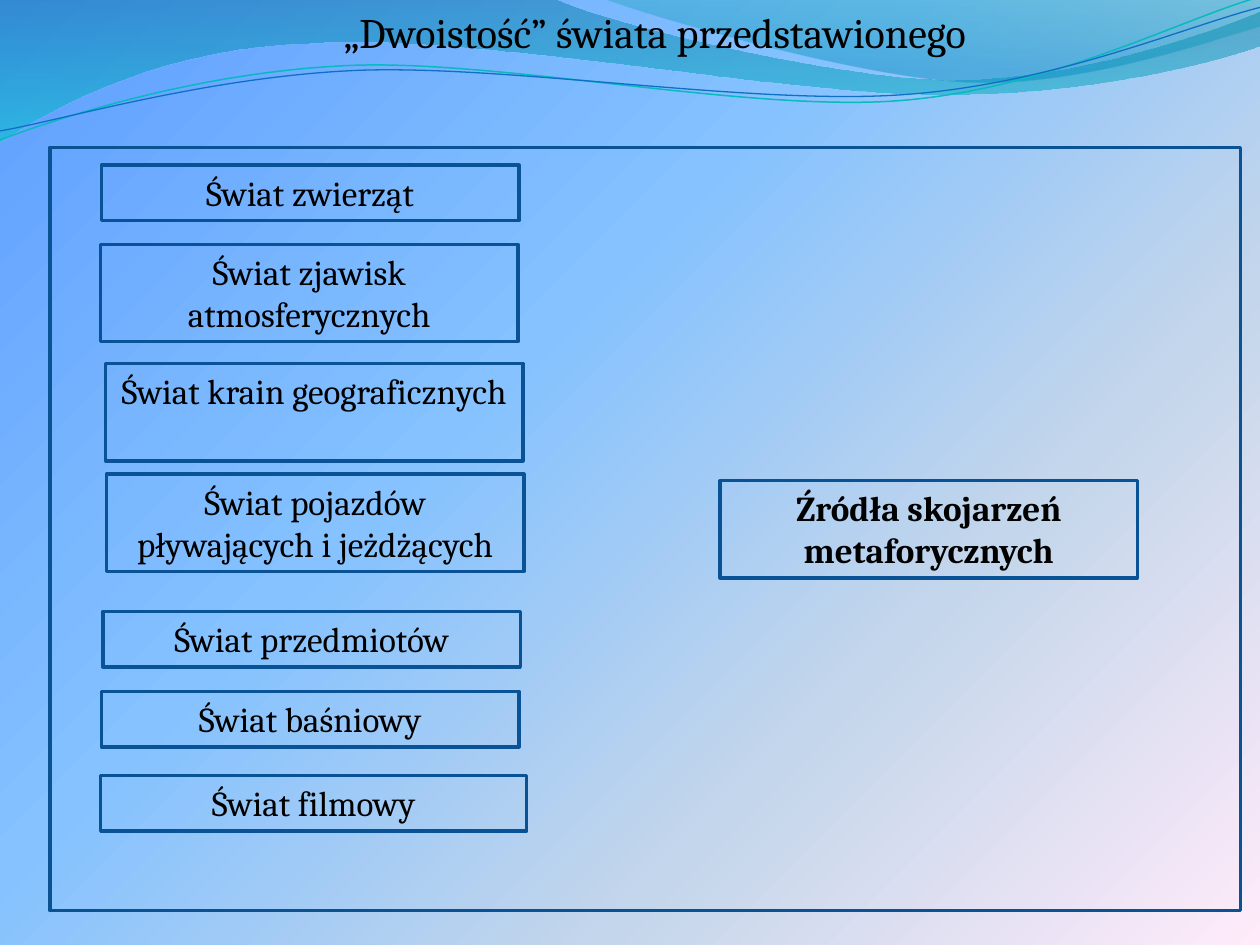
from math import cos, radians, sin

from lxml import etree
from pptx import Presentation
from pptx.dml.color import RGBColor
from pptx.enum.shapes import MSO_SHAPE
from pptx.enum.text import MSO_ANCHOR, PP_ALIGN
from pptx.oxml.ns import qn
from pptx.util import Cm, Pt

RECTANGLE = MSO_SHAPE.RECTANGLE
CENTER = PP_ALIGN.CENTER
TOP = MSO_ANCHOR.TOP

BLACK = RGBColor(0x00, 0x00, 0x00)
BORDER = RGBColor(0x09, 0x52, 0x95)
FRAME_BORDER = RGBColor(0x0B, 0x52, 0x92)
TEAL = RGBColor(0x0A, 0xB8, 0xBF)
BLUE = RGBColor(0x0F, 0x6F, 0xC6)
FONT = "Cambria"
LINE_TILT = 2.7  # degrees, anticlockwise

# Content; lengths in centimetres
TITLE = "„Dwoistość” świata przedstawionego"
BOX_WIDTH = 8.41
LINE_HEIGHTS = {1: 1.12, 2: 1.96}

# text, left, top, width, number of lines, bold
BOXES = [
    ("Źródła skojarzeń metaforycznych", 14.52, 9.69, BOX_WIDTH, 2, True),
    ("Świat zwierząt", 2.05, 3.33, BOX_WIDTH, 1, False),
    ("Świat zjawisk atmosferycznych", 2.03, 4.93, BOX_WIDTH, 2, False),
    ("Świat krain geograficznych", 2.13, 7.33, BOX_WIDTH, 2, False),
    ("Świat pojazdów pływających i jeżdżących", 2.15, 9.56, BOX_WIDTH, 2, False),
    ("Świat przedmiotów", 2.08, 12.33, BOX_WIDTH, 1, False),
    ("Świat baśniowy", 2.05, 13.94, BOX_WIDTH, 1, False),
    ("Świat filmowy", 2.03, 15.63, 8.59, 1, False),
]

# Gradient stops: position, colour, opacity (all in percent but the colour)
BACKGROUND = [(0, "5E9EFF", 100), (40, "85C2FF", 100),
              (70, "C4D6EB", 100), (100, "FFEBFA", 100)]

# Outlines: start point, then segments of one point (line) or three (curve)
FILLED_WAVES = [
    ([(0, "0074A1", 45), (100, "00C6CF", 55)], (0, 0), [
        [(11.18, -0.03)],
        [(12.09, 0.43), (16.87, 1.6), (19.25, 1.6)],
        [(21.67, 1.6), (24.33, 0.66), (25.4, 0.23)],
        [(25.43, 0.91)],
        [(24.97, 1.12), (22.1, 1.93), (18.95, 1.91)],
        [(15.8, 1.91), (9.7, 0.71), (6.53, 0.86)],
        [(3.28, 0.91), (1.17, 2.11), (-0.03, 2.87)],
    ]),
    ([(0, "00A1A9", 30), (80, "008BBF", 45)], (12.17, -0.03), [
        [(12.93, 0.28), (17.32, 1.57), (19.53, 1.65)],
        [(21.74, 1.75), (24.41, 0.81), (25.4, 0.53)],
        [(25.4, 0)],
    ]),
]
# colour, line width, centre of the tilt, start, segments
LINE_WAVES = [
    (TEAL, 0.85, (12.67, 1.46), (0, 2.82), [
        [(1.22, 2.36), (4.01, 1.45), (7.04, 1.32)],
        [(10.03, 1.19), (15.06, 2.26), (18.11, 2.03)],
        [(21.16, 1.8), (23.83, 0.38), (25.35, -0.05)],
    ]),
    (BLUE, 0.75, (12.69, 1.5), (0, 2.64), [
        [(1.19, 2.44), (4.17, 1.55), (7.19, 1.42)],
        [(10.24, 1.3), (15.16, 2.13), (18.21, 1.91)],
        [(21.23, 1.7), (23.9, 0.53), (25.4, 0.15)],
    ]),
]


def set_gradient(fill, parent, stops, angle):
    """Fill with a linear gradient; the angle runs clockwise in degrees."""
    fill.gradient()
    gradient = next(parent.iter(qn("a:gradFill")))
    for child in list(gradient):
        gradient.remove(child)
    stop_list = etree.SubElement(gradient, qn("a:gsLst"))
    for position, color, opacity in stops:
        stop = etree.SubElement(stop_list, qn("a:gs"), pos=str(position * 1000))
        color_element = etree.SubElement(stop, qn("a:srgbClr"), val=color)
        if opacity < 100:
            etree.SubElement(color_element, qn("a:alpha"), val=str(opacity * 1000))
    etree.SubElement(gradient, qn("a:lin"), ang=str(angle * 60000), scaled="0")


def level(point, center):
    """Turn a point clockwise about the centre, undoing the tilt."""
    angle = radians(LINE_TILT)
    x, y = point[0] - center[0], point[1] - center[1]
    return (center[0] + x * cos(angle) - y * sin(angle),
            center[1] + x * sin(angle) + y * cos(angle))


def add_wave(slide, start, segments, close):
    """Build the outline through all points, then turn triples into curves."""
    points = [(Cm(x), Cm(y)) for x, y in [start, *sum(segments, [])]]
    builder = slide.shapes.build_freeform(*points[0])
    builder.add_line_segments(points[1:], close=close)
    wave = builder.convert_to_shape()
    wave.shadow.inherit = False
    lines = iter(list(wave.element.iter(qn("a:lnTo"))))
    for segment in segments:
        parts = [next(lines) for _ in segment]
        if len(parts) == 3:
            curve = etree.Element(qn("a:cubicBezTo"))
            parts[0].addprevious(curve)
            for part in parts:
                curve.append(part[0])
                part.getparent().remove(part)
    return wave


def add_outline(slide, left, top, width, height, color):
    shape = slide.shapes.add_shape(RECTANGLE, Cm(left), Cm(top), Cm(width), Cm(height))
    shape.shadow.inherit = False
    shape.fill.background()
    shape.line.color.rgb = color
    shape.line.width = Pt(2)
    return shape


def write(shape, text, size, bold=False):
    frame = shape.text_frame
    frame.word_wrap = True
    frame.vertical_anchor = TOP
    paragraph = frame.paragraphs[0]
    paragraph.alignment = CENTER
    run = paragraph.add_run()
    run.text = text
    run.font.name = FONT
    run.font.size = Pt(size)
    run.font.bold = bold
    run.font.color.rgb = BLACK


def main():
    presentation = Presentation()
    presentation.slide_width, presentation.slide_height = Cm(25.4), Cm(19.05)
    slide = presentation.slides.add_slide(presentation.slide_layouts[5])

    # Background and waves
    set_gradient(slide.background.fill, slide.element, BACKGROUND, 45)
    for stops, start, segments in FILLED_WAVES:
        wave = add_wave(slide, start, segments, True)
        set_gradient(wave.fill, wave.element, stops, 90)
        wave.line.fill.background()
    for color, width, center, start, segments in LINE_WAVES:
        level_segments = [[level(point, center) for point in segment]
                          for segment in segments]
        wave = add_wave(slide, level(start, center), level_segments, False)
        wave.rotation = -LINE_TILT
        wave.fill.background()
        wave.line.color.rgb = color
        wave.line.width = Pt(width)

    # Labelled boxes and frame
    for text, left, top, width, lines, bold in BOXES:
        box = add_outline(slide, left, top, width, LINE_HEIGHTS[lines], BORDER)
        write(box, text, 20, bold)
    add_outline(slide, 1.01, 2.97, 24, 15.39, FRAME_BORDER)

    # Title, in front of the waves
    title = slide.shapes.title
    title.left, title.top, title.width, title.height = Cm(3.5), Cm(0), Cm(19.41), Cm(3)
    write(title, TITLE, 24)
    slide.shapes.element.append(title.element)

    presentation.save("out.pptx")


if __name__ == "__main__":
    main()
